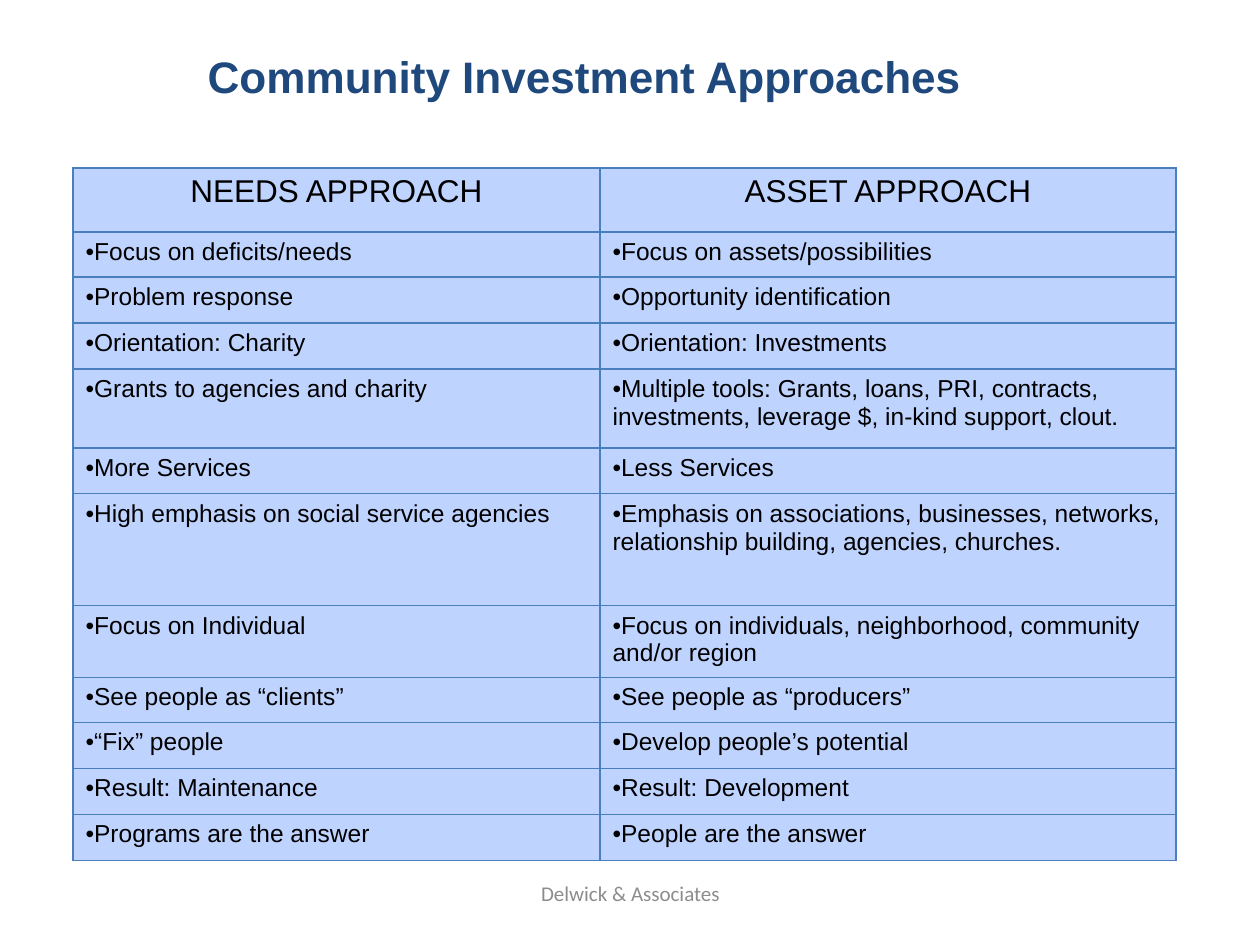
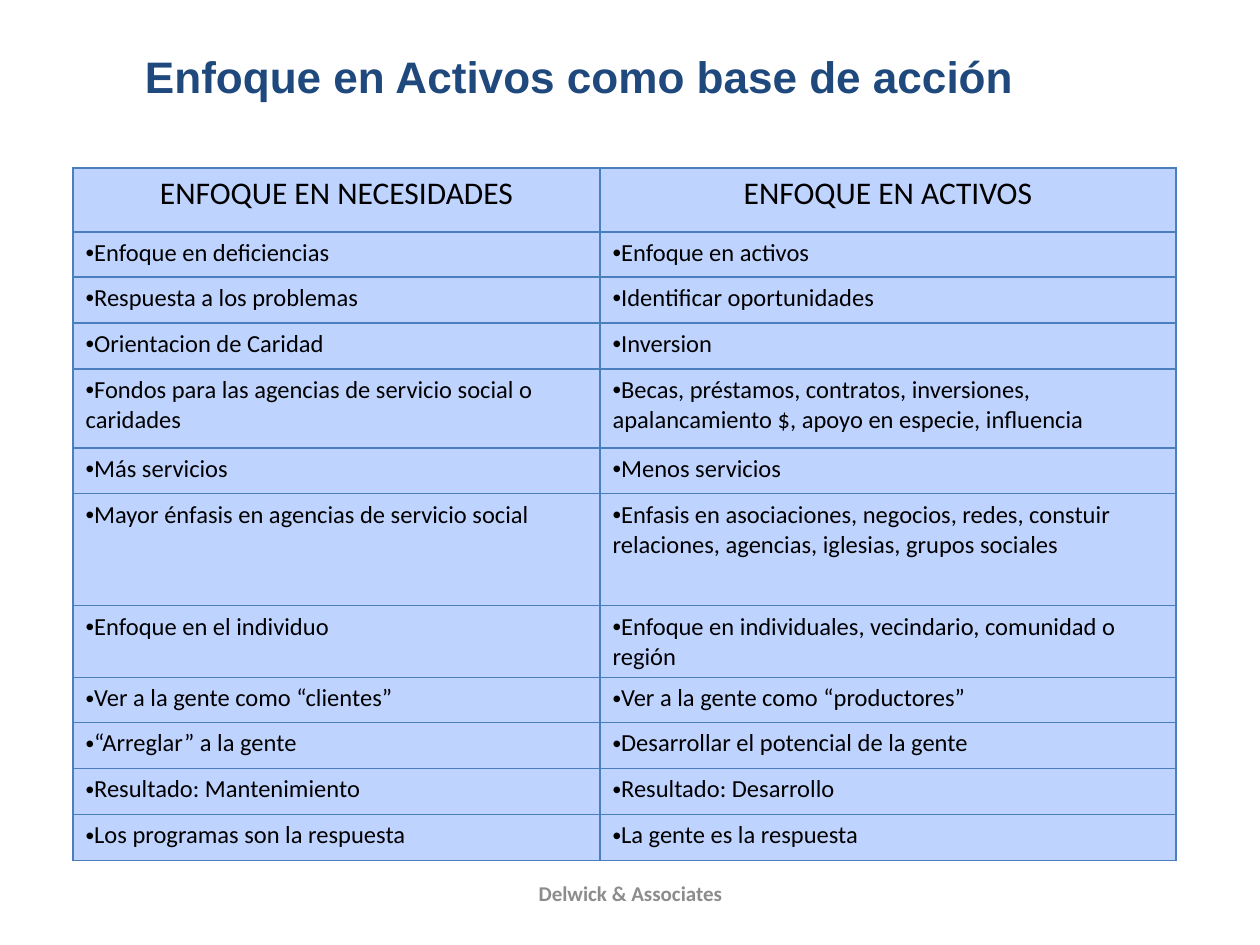
from lxml.etree import SubElement
from pptx import Presentation
from pptx.dml.color import RGBColor
from pptx.enum.text import MSO_ANCHOR as Anchor, PP_ALIGN as Align
from pptx.oxml.ns import qn
from pptx.util import Emu, Pt

PX = 914400 / 126
NAVY = RGBColor(0x1F, 0x49, 0x7D)
GRAY = RGBColor(0x8C, 0x8C, 0x8C)
BLACK = RGBColor(0x00, 0x00, 0x00)
PALE_BLUE = RGBColor(0xBF, 0xD3, 0xFF)
BORDER_BLUE = RGBColor(0x4B, 0x7E, 0xBC)

FOOTER = "Delwick & Associates"
COLUMN_WIDTHS = (527, 576)
ROW_HEIGHTS = (64, 45, 46, 46, 79, 46, 112, 50, 45, 46, 46, 46)

ENGLISH_ROWS = [
    ("NEEDS APPROACH", "ASSET APPROACH"),
    ("Focus on deficits/needs", "Focus on assets/possibilities"),
    ("Problem response", "Opportunity identification"),
    ("Orientation: Charity", "Orientation: Investments"),
    ("Grants to agencies and charity",
     "Multiple tools: Grants, loans, PRI, contracts, investments, "
     "leverage $, in-kind support, clout."),
    ("More Services", "Less Services"),
    ("High emphasis on social service agencies",
     "Emphasis on associations, businesses, networks, relationship building, "
     "agencies, churches."),
    ("Focus on Individual",
     "Focus on individuals, neighborhood, community and/or region"),
    ("See people as “clients”", "See people as “producers”"),
    ("“Fix” people", "Develop people’s potential"),
    ("Result: Maintenance", "Result: Development"),
    ("Programs are the answer", "People are the answer"),
]
SPANISH_ROWS = [
    ("ENFOQUE EN NECESIDADES", "ENFOQUE EN ACTIVOS"),
    ("Enfoque en deficiencias", "Enfoque en activos"),
    ("Respuesta a los problemas", "Identificar oportunidades"),
    ("Orientacion de Caridad", "Inversion"),
    ("Fondos para las agencias de servicio social o caridades",
     "Becas, préstamos, contratos, inversiones, apalancamiento $, "
     "apoyo en especie, influencia"),
    ("Más servicios", "Menos servicios"),
    ("Mayor énfasis en agencias de servicio social",
     "Enfasis en asociaciones, negocios, redes, constuir relaciones, "
     "agencias, iglesias, grupos sociales"),
    ("Enfoque en el individuo",
     "Enfoque en individuales, vecindario, comunidad o región"),
    ("Ver a la gente como “clientes”", "Ver a la gente como “productores”"),
    ("“Arreglar” a la gente", "Desarrollar el potencial de la gente"),
    ("Resultado: Mantenimiento", "Resultado: Desarrollo"),
    ("Los programas son la respuesta", "La gente es la respuesta"),
]


def px(length):
    return Emu(round(length * PX))


def add_run(paragraph, text, font_name, size, color, bold=False):
    run = paragraph.add_run()
    run.text = text
    run.font.name = font_name
    run.font.size = Pt(size)
    run.font.color.rgb = color
    run.font.bold = bold


def add_centered_box(slide, left, top, width, height):
    """Add an empty box, centred both ways, and return its text frame."""
    frame = slide.shapes.add_textbox(*map(px, (left, top, width, height))).text_frame
    frame.word_wrap = True
    frame.vertical_anchor = Anchor.MIDDLE
    frame.paragraphs[0].alignment = Align.CENTER
    return frame


def add_title(slide, title, right_inset):
    frame = add_centered_box(slide, 53, 21, 1081, 88)
    frame.margin_top = px(28)
    frame.margin_right = px(right_inset)
    add_run(frame.paragraphs[0], title, "Arial", 25.2, NAVY, bold=True)


def add_footer(slide, bold):
    frame = add_centered_box(slide, 431, 861, 399, 65)
    add_run(frame.paragraphs[0], FOOTER, "Calibri", 12, GRAY, bold)


def add_bullet(paragraph):
    properties = paragraph._p.get_or_add_pPr()
    properties.set("marL", "0")
    properties.set("indent", "0")
    SubElement(properties, qn("a:buFont"), typeface="Arial")
    SubElement(properties, qn("a:buChar"), char="•")
    tabs = SubElement(properties, qn("a:tabLst"))
    SubElement(tabs, qn("a:tab"), pos=str(px(63)), algn="l")


def style_cell(cell):
    properties = cell._tc.get_or_add_tcPr()
    for side in ("lnL", "lnR", "lnT", "lnB"):
        line = SubElement(properties, qn(f"a:{side}"), w=str(Pt(0.75)))
        fill = SubElement(line, qn("a:solidFill"))
        SubElement(fill, qn("a:srgbClr"), val=str(BORDER_BLUE))
    cell.fill.solid()
    cell.fill.fore_color.rgb = PALE_BLUE


def add_comparison(slide, rows, font_name):
    table = slide.shapes.add_table(
        len(rows), len(COLUMN_WIDTHS), px(73), px(168),
        px(sum(COLUMN_WIDTHS)), px(sum(ROW_HEIGHTS))).table
    table.first_row = table.horz_banding = False
    for column, width in zip(table.columns, COLUMN_WIDTHS):
        column.width = px(width)
    for row_index, (height, statements) in enumerate(zip(ROW_HEIGHTS, rows)):
        table.rows[row_index].height = px(height)
        for column_index, statement in enumerate(statements):
            cell = table.cell(row_index, column_index)
            style_cell(cell)
            paragraph = cell.text_frame.paragraphs[0]
            if row_index == 0:
                paragraph.alignment = Align.CENTER
            else:
                add_bullet(paragraph)
            add_run(paragraph, statement, font_name, 14 if row_index else 18, BLACK)


def add_approach_slide(deck, title, title_inset, rows, font_name, bold_footer):
    slide = deck.slides.add_slide(deck.slide_layouts[6])
    add_footer(slide, bold_footer)
    add_title(slide, title, title_inset)
    add_comparison(slide, rows, font_name)


def main():
    deck = Presentation()
    deck.slide_width, deck.slide_height = px(1260), px(945)
    add_approach_slide(deck, "Community Investment Approaches", 31,
                       ENGLISH_ROWS, "Arial", bold_footer=False)
    add_approach_slide(deck, "Enfoque en Activos como base de acción", 41,
                       SPANISH_ROWS, "Calibri", bold_footer=True)
    deck.save("out.pptx")


if __name__ == "__main__":
    main()
